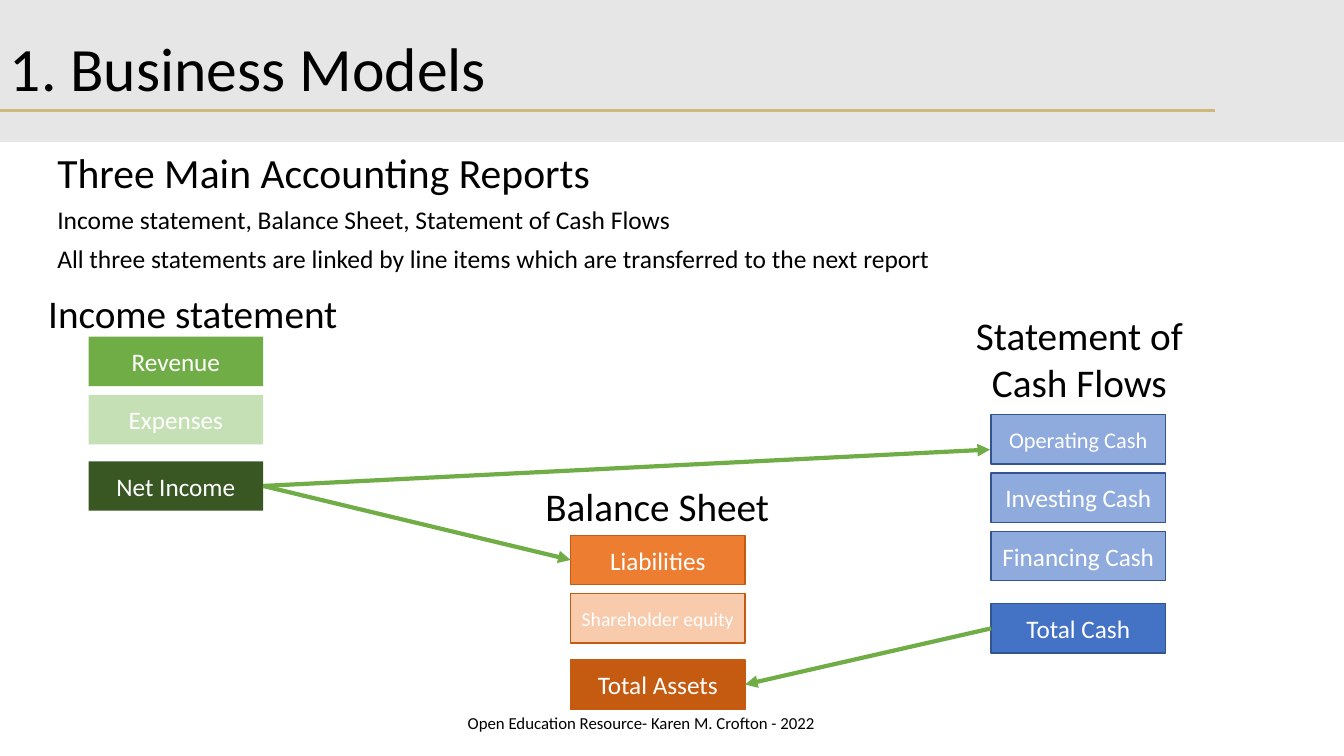
from dataclasses import dataclass

from lxml.etree import SubElement
from pptx import Presentation
from pptx.dml.color import RGBColor
from pptx.enum.shapes import MSO_CONNECTOR, MSO_SHAPE
from pptx.enum.text import MSO_ANCHOR, PP_ALIGN
from pptx.oxml.ns import qn
from pptx.shapes.autoshape import Shape
from pptx.shapes.connector import Connector
from pptx.slide import Slide
from pptx.text.text import _Paragraph as Paragraph
from pptx.util import Inches, Pt

# Grid: ten columns and ten rows to the inch
WIDTH, HEIGHT = 133.3, 75
BOX_WIDTH, BOX_HEIGHT, BOX_PITCH = 17.3, 4.9, 5.78
TOP, LEFT, BOTTOM, RIGHT = range(4)
BLACK, WHITE, ARROW_GREEN = "000000", "FFFFFF", "70AD47"


@dataclass(frozen=True)
class Item:
    label: str
    fill: str
    size: float = 18


@dataclass(frozen=True)
class Label:
    lines: tuple[tuple[str, float], ...]
    column: float
    row: float
    width: float
    height: float
    align: PP_ALIGN = PP_ALIGN.LEFT
    line_spacing: float = 1.0
    space_before: float = 0


@dataclass(frozen=True)
class Report:
    heading: Label
    column: float
    row: float
    items: tuple[Item, ...]
    total_gap: float  # extra rows above the last box
    outline: str | None = None


REPORTS = (
    Report(
        Label((("Income statement", 28),), 3.8, 28.2, 32, 5.7),
        8.8, 33.4,
        (Item("Revenue", "70AD47"), Item("Expenses", "C5E0B4"), Item("Net Income", "385723")),
        0.8,
    ),
    Report(
        Label((("Balance Sheet", 28),), 53.1, 47.4, 25.8, 5.7),
        56.6, 53.1,
        (Item("Liabilities", "ED7D31"), Item("Shareholder equity", "F8CBAD", 14),
         Item("Total Assets", "C55A11")),
        0.8, "C55A11",
    ),
    Report(
        Label((("Statement of Cash Flows", 28),), 92.8, 30.4, 28.5, 10.4, PP_ALIGN.CENTER),
        98.3, 41.15,
        (Item("Operating Cash", "8FAADC", 16), Item("Investing Cash", "8FAADC"),
         Item("Financing Cash", "8FAADC"), Item("Total Cash", "4472C4")),
        1.4, "325491",
    ),
)

LABELS = (
    Label(
        (("Three Main Accounting Reports", 29.7),
         ("Income statement, Balance Sheet, Statement of Cash Flows", 18.2),
         ("All three statements are linked by line items which are transferred to the next report",
          18.2)),
        4.7, 15, 120.4, 12.8, line_spacing=0.8, space_before=10,
    ),
    Label((("Open Education Resource- Karen M. Crofton - 2022", 12),), 45.4, 70.2, 66.8, 3),
)


def grid(units: float) -> int:
    return Inches(units / 10)


def color(value: str) -> RGBColor:
    return RGBColor.from_string(value)


def style(paragraph: Paragraph, text: str, size: float, ink: str, align: PP_ALIGN) -> None:
    paragraph.text = text
    paragraph.alignment = align
    paragraph.font.name = "Calibri"
    paragraph.font.size = Pt(size)
    paragraph.font.color.rgb = color(ink)


def add_label(slide: Slide, label: Label) -> None:
    box = slide.shapes.add_textbox(
        grid(label.column), grid(label.row), grid(label.width), grid(label.height))
    frame = box.text_frame
    frame.word_wrap = True
    for index, (text, size) in enumerate(label.lines):
        paragraph = frame.add_paragraph() if index else frame.paragraphs[0]
        style(paragraph, text, size, BLACK, label.align)
        paragraph.line_spacing = label.line_spacing
        paragraph.space_before = Pt(label.space_before)


def add_box(slide: Slide, column: float, row: float, width: float, height: float,
            item: Item, outline: str | None = None, ink: str = WHITE,
            align: PP_ALIGN = PP_ALIGN.CENTER) -> Shape:
    shape = slide.shapes.add_shape(
        MSO_SHAPE.RECTANGLE, grid(column), grid(row), grid(width), grid(height))
    shape.shadow.inherit = False
    shape.fill.solid()
    shape.fill.fore_color.rgb = color(item.fill)
    if outline:
        shape.line.color.rgb = color(outline)
        shape.line.width = Pt(1)
    else:
        shape.line.fill.background()
    shape.text_frame.word_wrap = True
    shape.text_frame.vertical_anchor = MSO_ANCHOR.MIDDLE
    style(shape.text_frame.paragraphs[0], item.label, item.size, ink, align)
    return shape


def add_report(slide: Slide, report: Report) -> dict[str, Shape]:
    add_label(slide, report.heading)
    boxes = {}
    for index, item in enumerate(report.items):
        gap = report.total_gap if item is report.items[-1] else 0
        row = report.row + index * BOX_PITCH + gap
        boxes[item.label] = add_box(
            slide, report.column, row, BOX_WIDTH, BOX_HEIGHT, item, report.outline)
    return boxes


def add_line(slide: Slide, start: tuple[float, float], end: tuple[float, float],
             ink: str, width: float, arrow: bool = False) -> Connector:
    connector = slide.shapes.add_connector(
        MSO_CONNECTOR.STRAIGHT, *map(grid, start), *map(grid, end))
    connector.line.color.rgb = color(ink)
    connector.line.width = Pt(width)
    properties = connector.element.spPr
    if arrow:
        SubElement(properties.find(qn("a:ln")), qn("a:tailEnd"), type="triangle")
    SubElement(properties, qn("a:effectLst"))
    return connector


def main() -> None:
    presentation = Presentation()
    presentation.slide_width, presentation.slide_height = grid(WIDTH), grid(HEIGHT)
    slide = presentation.slides.add_slide(presentation.slide_layouts[6])

    # Title band and rule
    title = Item("1. Business Models", "E7E6E6", 44)
    band = add_box(slide, 0, 0, WIDTH, 14.1, title, ink=BLACK, align=PP_ALIGN.LEFT)
    band.text_frame.paragraphs[0].line_spacing = 0.9
    add_line(slide, (0, 11), (120.5, 11), "CEB87B", 2)

    # Introduction and footer
    for label in LABELS:
        add_label(slide, label)

    # Reports
    boxes: dict[str, Shape] = {}
    for report in REPORTS:
        boxes.update(add_report(slide, report))

    # Transfers between reports; the first ends below the middle of its box
    to_cash = add_line(slide, (26.1, 48.3), (98.2, 44.6), ARROW_GREEN, 3, arrow=True)
    to_cash.begin_connect(boxes["Net Income"], RIGHT)
    for source, source_side, target, target_side in (
        ("Net Income", RIGHT, "Liabilities", LEFT),
        ("Total Cash", LEFT, "Total Assets", RIGHT),
    ):
        transfer = add_line(slide, (0, 0), (1, 1), ARROW_GREEN, 3, arrow=True)
        transfer.begin_connect(boxes[source], source_side)
        transfer.end_connect(boxes[target], target_side)

    presentation.save("out.pptx")


if __name__ == "__main__":
    main()
